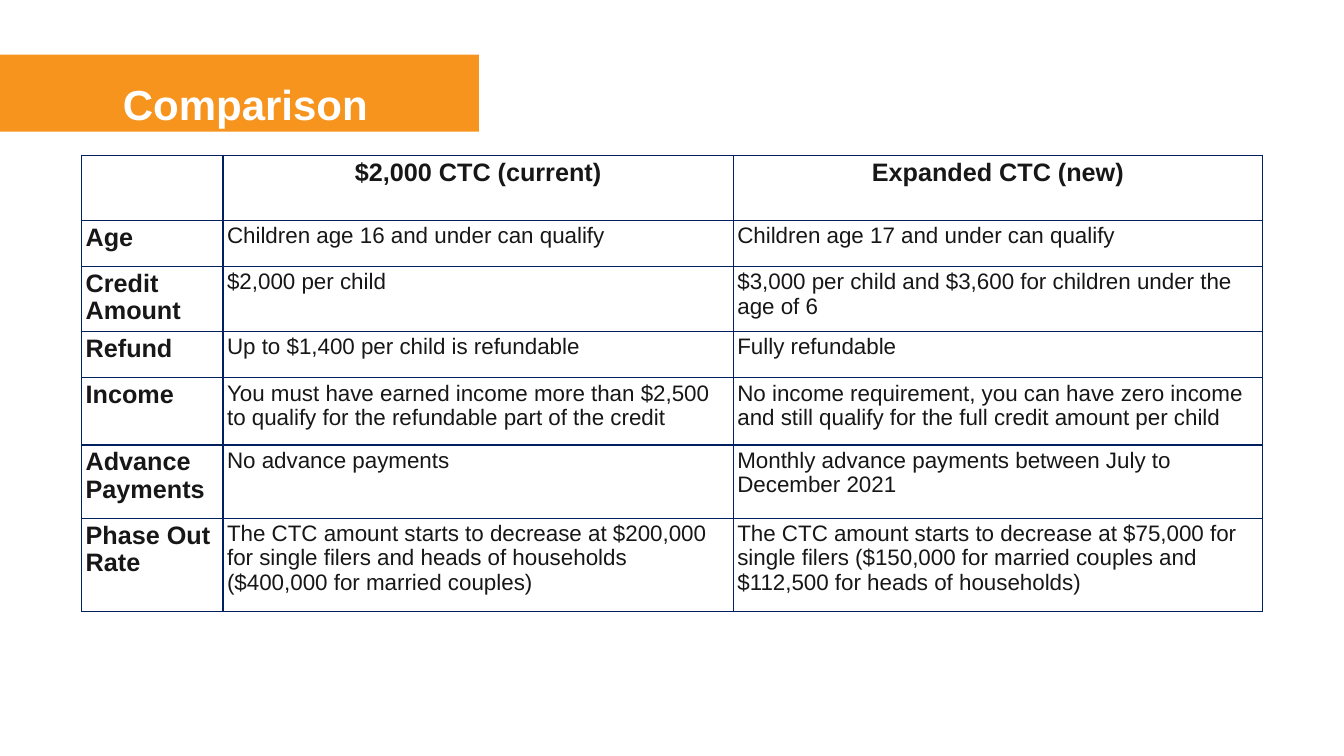
"""Build a slide comparing the current and the expanded child tax credit."""
from lxml.etree import SubElement
from pptx import Presentation
from pptx.dml.color import RGBColor
from pptx.enum.shapes import MSO_SHAPE
from pptx.enum.text import MSO_ANCHOR, MSO_AUTO_SIZE, PP_ALIGN
from pptx.oxml.ns import qn
from pptx.util import Pt

COLORS = {"bar": "F7941E", "title": "FFFFFF", "text": "181717", "border": "002060"}
TITLE = "Comparison"
ROWS = [
    ("", "$2,000 CTC (current)", "Expanded CTC (new)"),
    ("Age", "Children age 16 and under can qualify", "Children age 17 and under can qualify"),
    ("Credit Amount", "$2,000 per child",
     "$3,000 per child and $3,600 for children under the age of 6"),
    ("Refund", "Up to $1,400 per child is refundable", "Fully refundable"),
    ("Income",
     "You must have earned income more than $2,500 to qualify for the refundable part of the credit",
     "No income requirement, you can have zero income and still qualify for the full credit "
     "amount per child"),
    ("Advance Payments", "No advance payments",
     "Monthly advance payments between July to December 2021"),
    ("Phase Out Rate",
     "The CTC amount starts to decrease at $200,000 for single filers and heads of households "
     "($400,000 for married couples)",
     "The CTC amount starts to decrease at $75,000 for single filers ($150,000 for married "
     "couples and $112,500 for heads of households)"),
]
COLUMN_WIDTHS = [101, 364.5, 378]
ROW_HEIGHTS = [46.5, 33, 46.5, 33, 48, 52.5, 66.5]
TABLE_LEFT, TABLE_TOP = 58.3, 110.9
CELL_MARGIN = 2.9
HEADING = {"name": "Arial", "size": Pt(18), "bold": True}
DETAIL = {"name": "Arial", "size": Pt(16), "bold": False}
TITLE_FONT = {"name": "Arial", "size": Pt(30), "bold": True}


def format_font(font, values, color):
    for name, value in values.items():
        setattr(font, name, value)
    font.color.rgb = RGBColor.from_string(COLORS[color])


def add_borders(cell):
    properties = cell._tc.get_or_add_tcPr()
    for side in ("a:lnL", "a:lnR", "a:lnT", "a:lnB"):
        line = SubElement(properties, qn(side), w=str(Pt(1)))
        fill = SubElement(line, qn("a:solidFill"))
        SubElement(fill, qn("a:srgbClr"), val=COLORS["border"])


def add_title(slide):
    bar = slide.shapes.add_shape(MSO_SHAPE.RECTANGLE, Pt(0), Pt(39), Pt(342), Pt(55))
    bar.shadow.inherit = False
    bar.fill.solid()
    bar.fill.fore_color.rgb = RGBColor.from_string(COLORS["bar"])
    bar.line.fill.background()
    title = slide.shapes.title
    bar._element.addnext(title._element)
    title.left, title.top, title.width, title.height = Pt(80.6), Pt(56.2), Pt(828), Pt(55.4)
    frame = title.text_frame
    frame.text = TITLE
    frame.auto_size = MSO_AUTO_SIZE.NONE
    frame.vertical_anchor = MSO_ANCHOR.TOP
    paragraph = frame.paragraphs[0]
    paragraph.alignment = PP_ALIGN.LEFT
    paragraph.line_spacing = 0.9
    format_font(paragraph.runs[0].font, TITLE_FONT, "title")


def fill_cell(cell, text, row, column):
    cell.margin_left = cell.margin_right = Pt(CELL_MARGIN)
    cell.margin_top = cell.margin_bottom = Pt(CELL_MARGIN)
    cell.vertical_anchor = MSO_ANCHOR.TOP
    add_borders(cell)
    cell.fill.background()
    cell.text = text
    paragraph = cell.text_frame.paragraphs[0]
    paragraph.alignment = PP_ALIGN.CENTER if row == 0 else PP_ALIGN.LEFT
    paragraph.line_spacing = 0.97
    for run in paragraph.runs:
        format_font(run.font, HEADING if row == 0 or column == 0 else DETAIL, "text")


def add_comparison_table(slide):
    table = slide.shapes.add_table(
        len(ROWS), len(COLUMN_WIDTHS), Pt(TABLE_LEFT), Pt(TABLE_TOP),
        Pt(sum(COLUMN_WIDTHS)), Pt(sum(ROW_HEIGHTS))).table
    table.first_row = table.horz_banding = False
    for column, width in zip(table.columns, COLUMN_WIDTHS):
        column.width = Pt(width)
    for table_row, height in zip(table.rows, ROW_HEIGHTS):
        table_row.height = Pt(height)
    for row, texts in enumerate(ROWS):
        for column, text in enumerate(texts):
            fill_cell(table.cell(row, column), text, row, column)


def main():
    presentation = Presentation()
    presentation.slide_width, presentation.slide_height = Pt(960), Pt(540)
    slide = presentation.slides.add_slide(presentation.slide_layouts[5])
    add_title(slide)
    add_comparison_table(slide)
    presentation.save("out.pptx")


if __name__ == "__main__":
    main()
